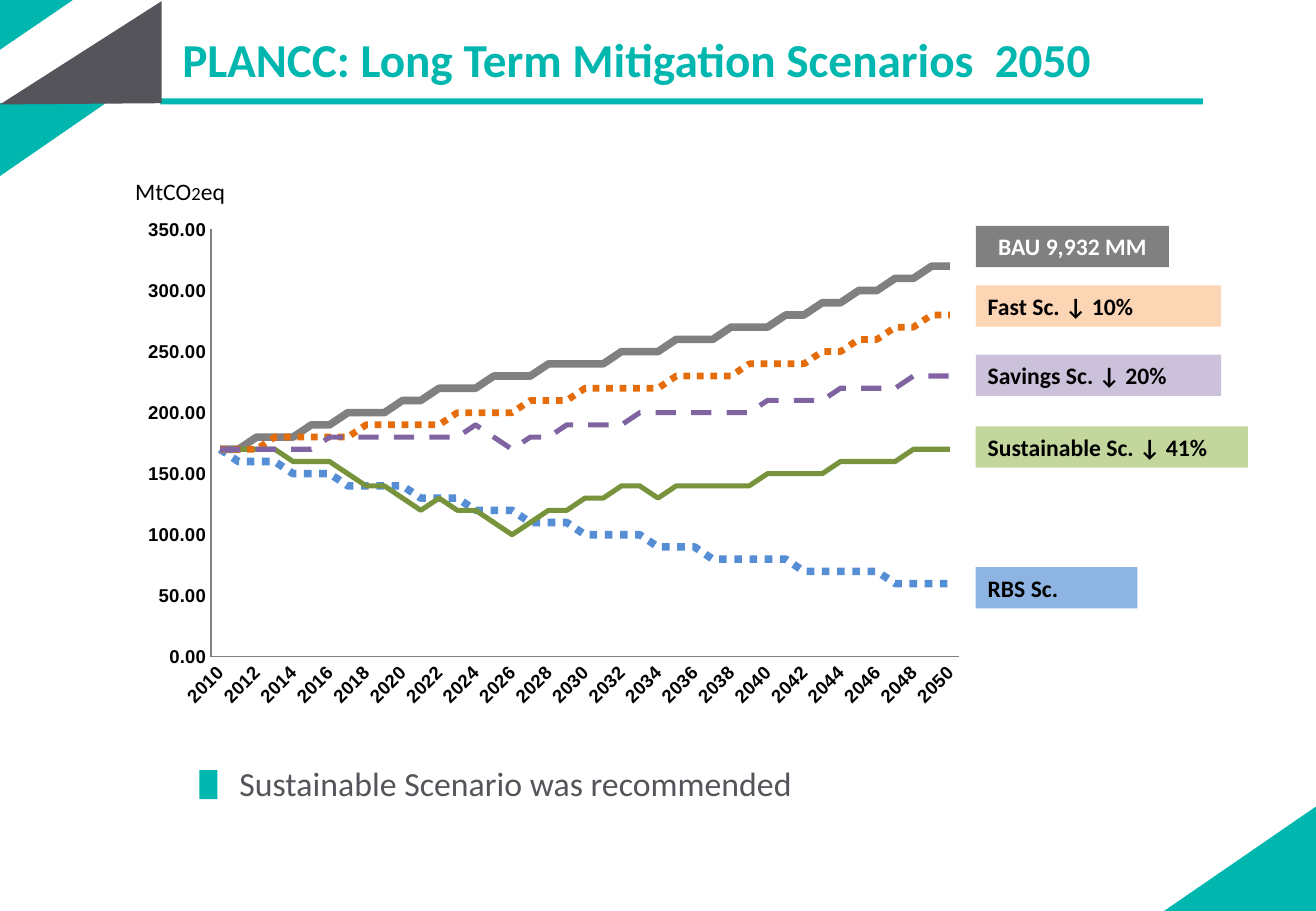
"""Build the long term mitigation scenarios slide."""
from dataclasses import dataclass

from lxml import etree
from pptx import Presentation
from pptx.chart.data import CategoryChartData
from pptx.dml.color import RGBColor
from pptx.enum.chart import XL_CHART_TYPE, XL_TICK_MARK
from pptx.enum.dml import MSO_LINE
from pptx.enum.shapes import MSO_SHAPE
from pptx.enum.text import MSO_ANCHOR, MSO_AUTO_SIZE, PP_ALIGN
from pptx.oxml.ns import qn
from pptx.util import Inches, Pt

LINE_CHART = XL_CHART_TYPE.LINE
NO_TICK = XL_TICK_MARK.NONE
SOLID, DOTTED, DASHED = MSO_LINE.SOLID, MSO_LINE.ROUND_DOT, MSO_LINE.DASH
RECTANGLE = MSO_SHAPE.RECTANGLE
MIDDLE = MSO_ANCHOR.MIDDLE
NO_FIT = MSO_AUTO_SIZE.NONE
LEFT, CENTER, RIGHT = PP_ALIGN.LEFT, PP_ALIGN.CENTER, PP_ALIGN.RIGHT


@dataclass(frozen=True)
class Theme:
    """Colours, fonts and type sizes of the slide."""
    teal: str = "00B7AF"
    slate: str = "56545B"
    black: str = "000000"
    white: str = "FFFFFF"
    gray: str = "808080"
    blue: str = "558ED5"
    green: str = "77933C"
    orange: str = "E46C0A"
    purple: str = "8064A2"
    pale_orange: str = "FCD5B5"
    pale_purple: str = "CCC1DA"
    pale_green: str = "C3D69B"
    pale_blue: str = "8EB4E3"
    text_font: str = "Calibri"
    chart_font: str = "Arial"
    title_size: int = 28
    body_size: int = 20
    label_size: int = 14
    small_size: int = 11


THEME = Theme()
YEARS = range(2010, 2051)
SCENARIOS = [
    ("BAU", THEME.gray, 4.5, SOLID,
     [170, 170, 180, 180, 180, 190, 190, 200, 200, 200, 210, 210, 220, 220,
      220, 230, 230, 230, 240, 240, 240, 240, 250, 250, 250, 260, 260, 260,
      270, 270, 270, 280, 280, 290, 290, 300, 300, 310, 310, 320, 320]),
    ("RBS", THEME.blue, 4.5, DOTTED,
     [170, 160, 160, 160, 150, 150, 150, 140, 140, 140, 140, 130, 130, 130,
      120, 120, 120, 110, 110, 110, 100, 100, 100, 100, 90, 90, 90, 80,
      80, 80, 80, 80, 70, 70, 70, 70, 70, 60, 60, 60, 60]),
    ("Sustainable", THEME.green, 3, SOLID,
     [170, 170, 170, 170, 160, 160, 160, 150, 140, 140, 130, 120, 130, 120,
      120, 110, 100, 110, 120, 120, 130, 130, 140, 140, 130, 140, 140, 140,
      140, 140, 150, 150, 150, 150, 160, 160, 160, 160, 170, 170, 170]),
    ("Fast", THEME.orange, 4, DOTTED,
     [170, 170, 170, 180, 180, 180, 180, 180, 190, 190, 190, 190, 190, 200,
      200, 200, 200, 210, 210, 210, 220, 220, 220, 220, 220, 230, 230, 230,
      230, 240, 240, 240, 240, 250, 250, 260, 260, 270, 270, 280, 280]),
    ("Savings", THEME.purple, 3, DASHED,
     [170, 170, 170, 170, 170, 170, 180, 180, 180, 180, 180, 180, 180, 180,
      190, 180, 170, 180, 180, 190, 190, 190, 190, 200, 200, 200, 200, 200,
      200, 200, 210, 210, 210, 210, 220, 220, 220, 220, 230, 230, 230]),
]
LABELS = [
    ("BAU 9,932 MM", 1.86, 1.59, THEME.gray, THEME.white, CENTER),
    ("Fast Sc. ↓ 10%", 2.35, 2.02, THEME.pale_orange, THEME.black, LEFT),
    ("Savings Sc. ↓ 20%", 2.92, 2.02, THEME.pale_purple, THEME.black, LEFT),
    ("Sustainable Sc. ↓ 41%", 3.51, 2.24, THEME.pale_green, THEME.black, LEFT),
    ("RBS Sc.", 4.67, 1.33, THEME.pale_blue, THEME.black, LEFT),
]


class SlideBuilder:
    """Hold the theme and the current page, and add elements to it."""

    def __init__(self, page, theme):
        """Keep the page and theme."""
        self.page = page
        self.theme = theme

    def style_font(self, font, size, color, bold=False, name=None):
        """Set size, colour, weight and typeface of a font."""
        font.name = name or self.theme.text_font
        font.size = Pt(size)
        font.bold = bold
        font.color.rgb = RGBColor.from_string(color)

    def paint(self, shape, color):
        """Give a shape a plain fill without line or shadow."""
        shape.shadow.inherit = False
        shape.fill.solid()
        shape.fill.fore_color.rgb = RGBColor.from_string(color)
        shape.line.fill.background()

    def rectangle(self, left, top, width, height, color):
        """Add a plain rectangle."""
        box = self.page.shapes.add_shape(
            RECTANGLE, Inches(left), Inches(top), Inches(width), Inches(height))
        self.paint(box, color)
        return box

    def triangle(self, corners, color):
        """Add a triangle through three corners."""
        start, *others = [(Inches(x), Inches(y)) for x, y in corners]
        builder = self.page.shapes.build_freeform(*start)
        builder.add_line_segments(others, close=True)
        self.paint(builder.convert_to_shape(), color)

    def label(self, text, top, width, fill, color, align):
        """Add a filled scenario label beside the chart."""
        box = self.rectangle(8.03, top, width, 0.34, fill)
        para = box.text_frame.paragraphs[0]
        para.text = text
        para.alignment = align
        self.style_font(para.font, self.theme.label_size, color, True)

    def placeholder(self, index, text, area, size, color, bold=False):
        """Move, fill and format a placeholder."""
        box = self.page.placeholders[index]
        box.left, box.top, box.width, box.height = map(Inches, area)
        frame = box.text_frame
        frame.auto_size = NO_FIT
        frame.word_wrap = True
        frame.vertical_anchor = MIDDLE
        para = frame.paragraphs[0]
        para.text = text
        para.alignment = LEFT
        para.space_before = Pt(0)
        self.style_font(para.font, size, color, bold)
        return para

    def title(self, text):
        """Fill the title placeholder."""
        self.placeholder(0, text, (1.4, 0.2, 7.78, 0.57),
                         self.theme.title_size, self.theme.teal, True)

    def body(self, text):
        """Fill the body placeholder, without its bullet."""
        para = self.placeholder(1, text, (1.87, 6.23, 5.59, 0.44),
                                self.theme.body_size, self.theme.slate)
        properties = para._p.get_or_add_pPr()
        properties.set("marL", "0")
        properties.set("indent", "0")
        bullet = etree.Element(qn("a:buNone"))
        properties.find(qn("a:defRPr")).addprevious(bullet)

    def unit(self, spans):
        """Add the unit of the value axis from sized spans."""
        box = self.page.shapes.add_textbox(
            Inches(0.5), Inches(1.41), Inches(1.45), Inches(0.34))
        box.text_frame.word_wrap = True
        para = box.text_frame.paragraphs[0]
        para.alignment = RIGHT
        for text, size in spans:
            span = para.add_run()
            span.text = text
            self.style_font(span.font, size, self.theme.black)

    def style_axis(self, axis):
        """Format an axis without ticks or gridlines."""
        axis.has_major_gridlines = False
        axis.major_tick_mark = axis.minor_tick_mark = NO_TICK
        axis.format.line.color.rgb = RGBColor.from_string(self.theme.gray)
        axis.format.line.width = Pt(0.75)
        self.style_font(axis.tick_labels.font, self.theme.small_size,
                        self.theme.black, True, self.theme.chart_font)

    def line_chart(self, categories, scenarios):
        """Add the scenario line chart."""
        data = CategoryChartData(number_format="#,##0.00")
        data.categories = [str(year) for year in categories]
        for name, _, _, _, values in scenarios:
            data.add_series(name, values)
        chart = self.page.shapes.add_chart(
            LINE_CHART, Inches(1.02), Inches(1.72), Inches(7.16), Inches(4.24),
            data).chart
        chart.has_legend = chart.has_title = False
        self.style_font(chart.font, self.theme.small_size, self.theme.black,
                        True, self.theme.chart_font)
        chart.plots[0].vary_by_categories = False
        for series, (_, color, width, dash, _) in zip(chart.plots[0].series, scenarios):
            series.smooth = False
            series.format.line.color.rgb = RGBColor.from_string(color)
            series.format.line.width = Pt(width)
            series.format.line.dash_style = dash
        value_axis, category_axis = chart.value_axis, chart.category_axis
        self.style_axis(value_axis)
        self.style_axis(category_axis)
        value_axis.minimum_scale, value_axis.maximum_scale = 0, 350
        value_axis.major_unit = 50
        value_axis.tick_labels.number_format = "#,##0.00"
        value_axis.tick_labels.number_format_is_linked = False
        axis_xml = category_axis._element
        axis_xml.find(".//" + qn("a:bodyPr")).set("rot", "-2700000")
        skip = etree.Element(qn("c:tickLblSkip"), val="2")
        axis_xml.find(qn("c:noMultiLvlLbl")).addprevious(skip)
        self.place_plot(chart)

    def place_plot(self, chart):
        """Fix the inner plot area of a chart."""
        area = chart._chartSpace.find(".//" + qn("c:plotArea"))
        for old in area.findall(qn("c:layout")):
            area.remove(old)
        layout = etree.Element(qn("c:layout"))
        manual = etree.SubElement(layout, qn("c:manualLayout"))
        for tag, value in (("layoutTarget", "inner"), ("xMode", "edge"),
                           ("yMode", "edge"), ("x", "0.1"), ("y", "0.04"),
                           ("w", "0.86"), ("h", "0.83")):
            etree.SubElement(manual, qn("c:" + tag), val=value)
        area.insert(0, layout)


def main():
    """Build and save the deck."""
    deck = Presentation()
    deck.slide_width, deck.slide_height = Inches(10.83), Inches(7.5)
    slide = SlideBuilder(deck.slides.add_slide(deck.slide_layouts[1]), THEME)
    slide.triangle([(0, 0), (0.6, 0), (0, 0.41)], THEME.teal)
    slide.triangle([(0, 0.85), (0.87, 0.85), (0, 1.45)], THEME.teal)
    slide.rectangle(1.32, 0.81, 8.58, 0.05, THEME.teal)
    slide.triangle([(10.83, 6.64), (10.83, 7.5), (9.58, 7.5)], THEME.teal)
    slide.triangle([(1.33, 0.01), (1.33, 0.85), (0, 0.86)], THEME.slate)
    slide.line_chart(YEARS, SCENARIOS)
    for label in LABELS:
        slide.label(*label)
    slide.body("Sustainable Scenario was recommended")
    slide.rectangle(1.64, 6.34, 0.15, 0.24, THEME.teal)
    slide.title("PLANCC: Long Term Mitigation Scenarios  2050")
    slide.unit([("MtCO", THEME.label_size), ("2", THEME.small_size),
                ("eq", THEME.label_size)])
    deck.save("out.pptx")


if __name__ == "__main__":
    main()
